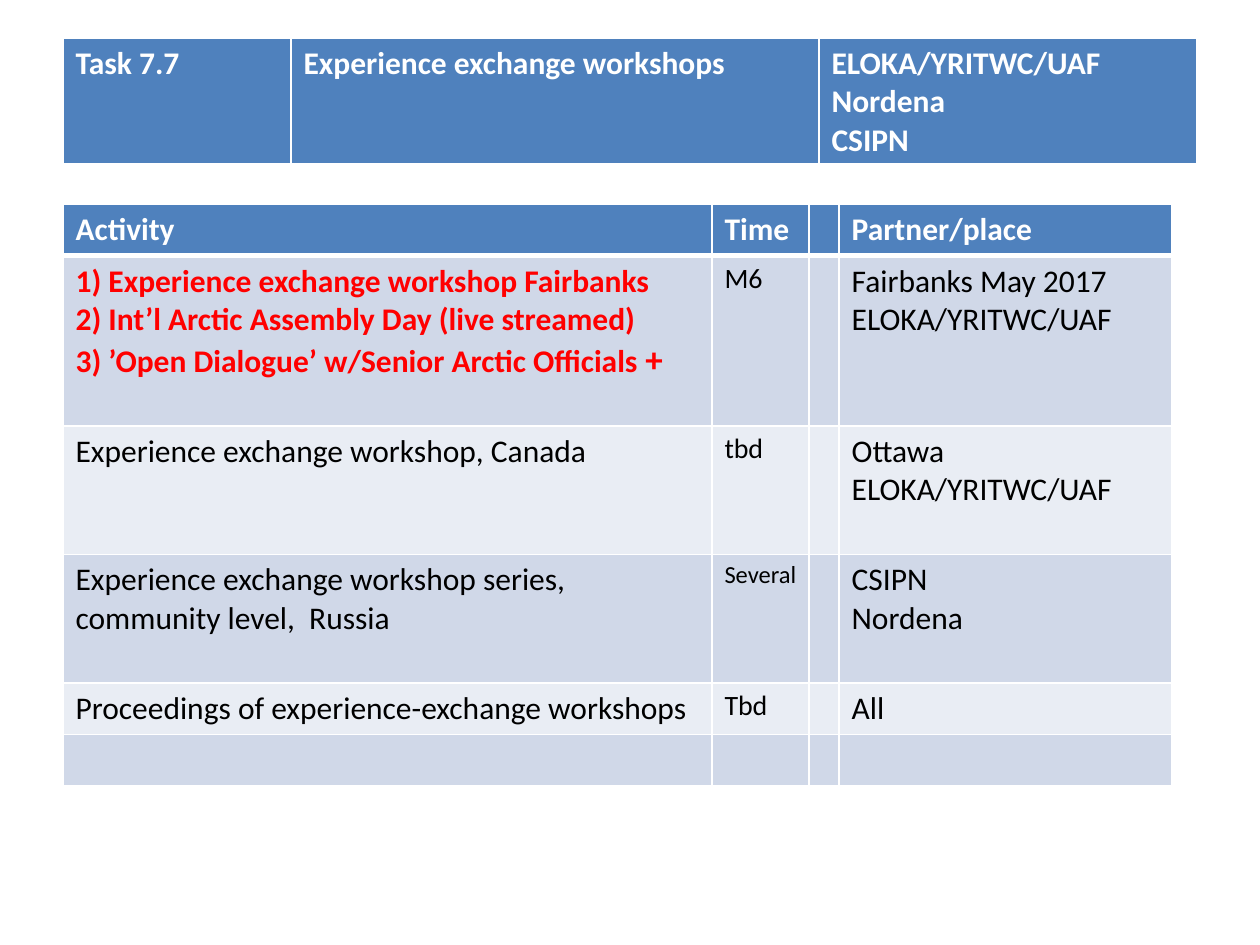
import pptx
import pptx.dml.color
import pptx.oxml
import pptx.oxml.ns
import pptx.util

Inches = pptx.util.Inches
Pt = pptx.util.Pt
BLUE, DARK, LIGHT = "4F81BD", "D0D8E8", "E9EDF4"
WHITE, BLACK, RED = "FFFFFF", "000000", "FF0000"


def paint(color, code):
    color.rgb = pptx.dml.color.RGBColor.from_string(code)


def edge(cell, head):
    """White cell borders, thicker below a header row."""
    props = cell._tc.get_or_add_tcPr()
    for i, side in enumerate("LRTB"):
        width = Pt(3 if head and side == "B" else 1)
        line = pptx.oxml.parse_xml(
            f'<a:ln{side} {pptx.oxml.ns.nsdecls("a")} w="{width}"><a:solidFill>'
            f'<a:srgbClr val="{WHITE}"/></a:solidFill></a:ln{side}>')
        props.insert(i, line)


deck = pptx.Presentation()
deck.slide_width, deck.slide_height = Inches(10), Inches(7.5)
slide = deck.slides.add_slide(deck.slide_layouts[6])

task = [["Task 7.7", "Experience exchange workshops",
         "ELOKA/YRITWC/UAF\nNordena\nCSIPN"]]
plan = [
    ["Activity", "Time", "", "Partner/place"],
    ["1) Experience exchange workshop Fairbanks\n"
     "2) Int’l Arctic Assembly Day (live streamed)\n"
     "3) ’Open Dialogue’ w/Senior Arctic Officials ",
     "M6", "", "Fairbanks May 2017\nELOKA/YRITWC/UAF"],
    ["Experience exchange workshop, Canada", "tbd", "",
     "Ottawa\nELOKA/YRITWC/UAF"],
    ["Experience exchange workshop series, community level,  Russia",
     "Several", "", "CSIPN\nNordena"],
    ["Proceedings of experience-exchange workshops", "Tbd", "", "All"],
    ["", "", "", ""],
]
tables = [
    (0.3, task, [1.81, 4.19, 3], [1]),
    (1.62, plan, [5.15, 0.77, 0.24, 2.64], [0.41, 1.35, 1.02, 1.02, 0.41, 0.41]),
]

for top, rows, widths, heights in tables:
    frame = slide.shapes.add_table(
        len(rows), len(widths), Inches(0.5), Inches(top),
        Inches(sum(widths)), Inches(sum(heights)))
    table = frame.table
    for col, width in zip(table.columns, widths):
        col.width = Inches(width)
    for r, (row, height) in enumerate(zip(rows, heights)):
        table.rows[r].height = Inches(height)
        for c, text in enumerate(row):
            cell = table.cell(r, c)
            cell.fill.solid()
            paint(cell.fill.fore_color, BLUE if r == 0 else DARK if r % 2 else LIGHT)
            edge(cell, r == 0)
            cell.text_frame.text = text
            red = r == 1 and c == 0
            if red:
                cell.text_frame.paragraphs[-1].add_run().text = "+"
            size = 18
            if r and c == 1:
                size = 14 if text == "Several" else 16
                cell.margin_right = Inches(0.02)
            style = {"name": "Calibri", "bold": r == 0 or red, "size": Pt(size)}
            for para in cell.text_frame.paragraphs:
                for run in para.runs:
                    for key, value in style.items():
                        setattr(run.font, key, value)
                    paint(run.font.color, RED if red else BLACK if r else WHITE)
                    if run.text == "+":
                        run.font.size = Pt(20)

deck.save("out.pptx")
